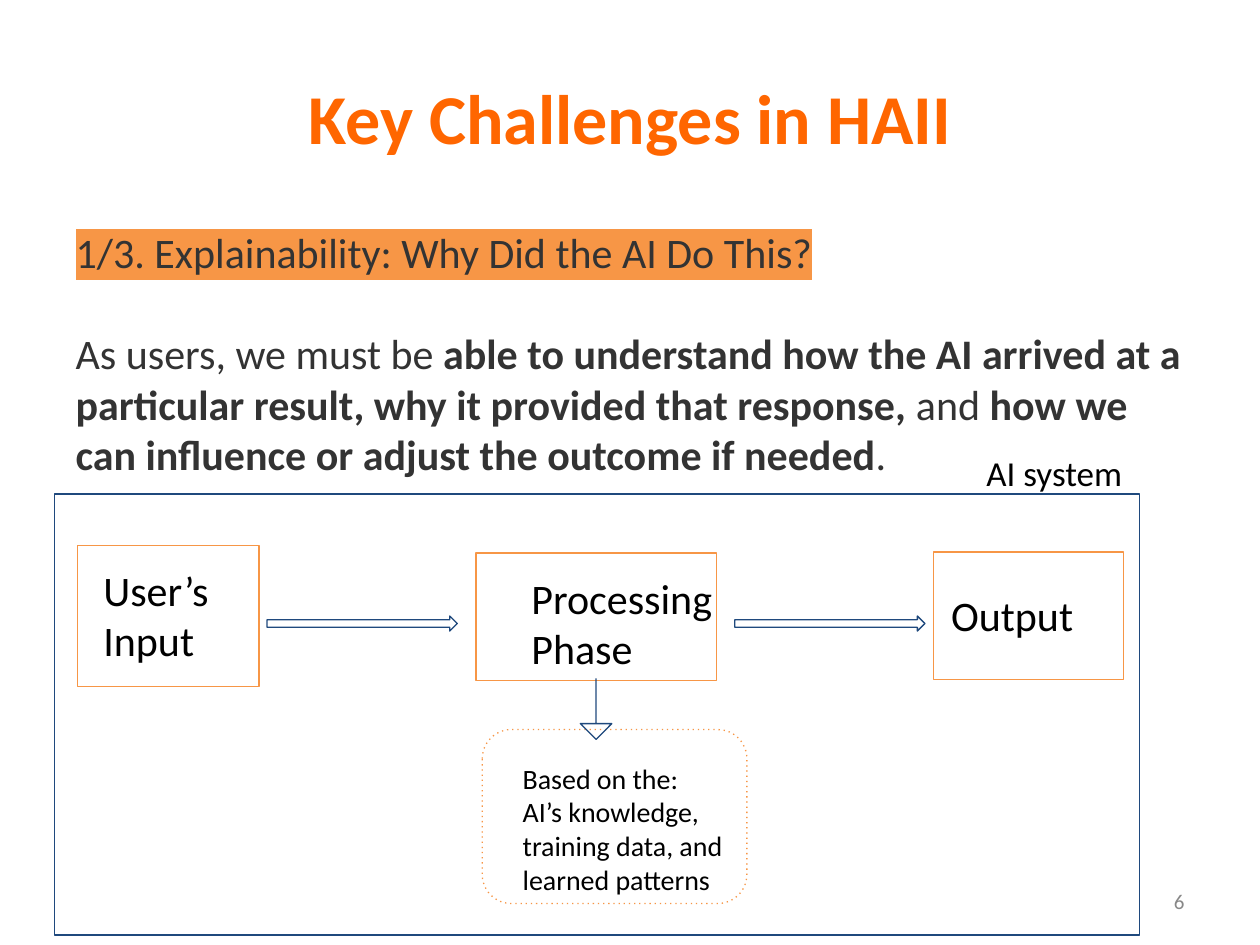
from pptx import Presentation
from pptx.dml.color import RGBColor
from pptx.enum.dml import MSO_LINE
from pptx.enum.shapes import MSO_SHAPE
from pptx.enum.text import MSO_ANCHOR, MSO_AUTO_SIZE, PP_ALIGN
from pptx.oxml.ns import qn
from pptx.util import Pt
from lxml import etree

TITLE = RGBColor(0xFF, 0x66, 0x00)
INK = RGBColor(0x33, 0x33, 0x33)
BLACK = RGBColor(0, 0, 0)
GREY = RGBColor(0x88, 0x88, 0x88)
ORANGE = RGBColor(0xF7, 0x96, 0x46)
NAVY = RGBColor(0x1F, 0x49, 0x7D)

RECT = MSO_SHAPE.RECTANGLE
ROUND = MSO_SHAPE.ROUNDED_RECTANGLE
ARROW = MSO_SHAPE.RIGHT_ARROW
DOTS = MSO_LINE.ROUND_DOT
MIDDLE, TOP = MSO_ANCHOR.MIDDLE, MSO_ANCHOR.TOP
LEFT, CENTER, RIGHT = PP_ALIGN.LEFT, PP_ALIGN.CENTER, PP_ALIGN.RIGHT
NO_FIT = MSO_AUTO_SIZE.NONE
FONT = "Calibri"


def place(shape, box):
    shape.left, shape.top, shape.width, shape.height = map(Pt, box)


def add_run(para, text, size, color, bold=False):
    run = para.add_run()
    run.text = text
    font = run.font
    font.name, font.size, font.bold = FONT, Pt(size), bold
    font.color.rgb = color
    return run


def mark(run, color):
    """Highlight a run; the element must follow the text fill."""
    tag = etree.Element(qn("a:highlight"))
    etree.SubElement(tag, qn("a:srgbClr")).set("val", str(color))
    run.font._element.find(qn("a:solidFill")).addnext(tag)


def add_label(slide, box, lines, size, color=BLACK, pad=7.2, anchor=TOP, align=LEFT):
    frame = slide.shapes.add_textbox(*map(Pt, box)).text_frame
    frame.word_wrap = True
    frame.vertical_anchor = anchor
    frame.margin_top = frame.margin_bottom = Pt(pad)
    para = frame.paragraphs[0]
    para.alignment = align
    for i, line in enumerate(lines):
        if i:
            para.add_line_break()
        add_run(para, line, size, color)


def add_outline(slide, kind, box, color, adjust=(), dotted=False, turn=0):
    shape = slide.shapes.add_shape(kind, *map(Pt, box))
    shape.shadow.inherit = False
    shape.fill.background()
    shape.line.color.rgb = color
    shape.line.width = Pt(0.75)
    if dotted:
        # The wider "dot" pattern has no enum member
        shape.line.dash_style = DOTS
        next(shape._element.iter(qn("a:prstDash"))).set("val", "dot")
    for i, value in enumerate(adjust):
        shape.adjustments[i] = value
    shape.rotation = turn


def fill_title(slide, box):
    title = slide.shapes.title
    place(title, box)
    frame = title.text_frame
    frame.auto_size = NO_FIT
    frame.vertical_anchor = MIDDLE
    para = frame.paragraphs[0]
    para.alignment = CENTER
    add_run(para, "Key Challenges in HAII", 40, TITLE, True)


def fill_body(slide, box):
    body = slide.placeholders[1]
    place(body, box)
    frame = body.text_frame
    frame.auto_size = NO_FIT
    head, text = frame.paragraphs[0], frame.add_paragraph()
    for para, gap in ((head, 0), (text, 29)):
        para.space_before = Pt(gap)
        props = para._p.get_or_add_pPr()
        props.set("marL", "0")
        props.set("indent", "0")
        etree.SubElement(props, qn("a:buNone"))

    mark(add_run(head, "1/3. Explainability: Why Did the AI Do This?", 24, INK), ORANGE)
    parts = (
        ("As users, we must be ", False),
        ("able to understand how the AI arrived at a particular result, "
         "why it provided that response, ", True),
        ("and", False),
        (" how we can influence or adjust the outcome if needed", True),
        (".", False),
    )
    for words, bold in parts:
        add_run(text, words, 24, INK, bold)


def draw_system(slide, box):
    x, y = box[:2]

    def at(dx, dy, wide, high):
        return x + dx, y + dy, wide, high

    # Labels; the first is narrow enough to wrap inside its stage
    labels = (
        (at(21, 33, 96, 73), ["User’s Input"], 24),
        (at(265.6, 37.5, 127, 73), ["Processing", "Phase"], 24),
        (at(260.6, 145.5, 137.5, 92),
         ["Based on the:", "AI’s knowledge,", "training data, and", "learned patterns"], 16),
        (at(505.4, 47.5, 109, 44), ["Output"], 24),
        (at(525.6, -31.6, 119, 39), ["AI system"], 20),
    )
    for spot, lines, size in labels:
        add_label(slide, spot, lines, size)

    # System frame and its three stages
    add_outline(slide, RECT, box, NAVY)
    for spot in ((13.4, 29.4, 103.7, 80.6), (241, 33.6, 137.5, 72.7),
                 (502.5, 33, 108.7, 72.7)):
        add_outline(slide, RECT, at(*spot), ORANGE)

    # Knowledge note
    add_outline(slide, ROUND, at(244.6, 134.5, 151.2, 99.4), ORANGE, (0.167,), True)

    # Arrows between stages, then down to the note
    for dx in (121.6, 388.8):
        add_outline(slide, ARROW, at(dx, 69.6, 108.7, 8.6), NAVY, (0.5, 0.5))
    add_outline(slide, ARROW, at(292.3, 113.8, 34.6, 18), NAVY, (0, 0.5), turn=90)


def main():
    deck = Presentation()
    deck.slide_width, deck.slide_height = Pt(720), Pt(540)
    slide = deck.slides.add_slide(deck.slide_layouts[1])
    fill_title(slide, (36, 21.6, 648, 90))
    fill_body(slide, (36, 126, 648, 318))
    draw_system(slide, (31, 282.4, 620, 252))
    # Page number
    add_label(slide, (516, 500.5, 168, 28.8), ["6"], 12, GREY, 3.6, MIDDLE, RIGHT)
    deck.save("out.pptx")


if __name__ == "__main__":
    main()
